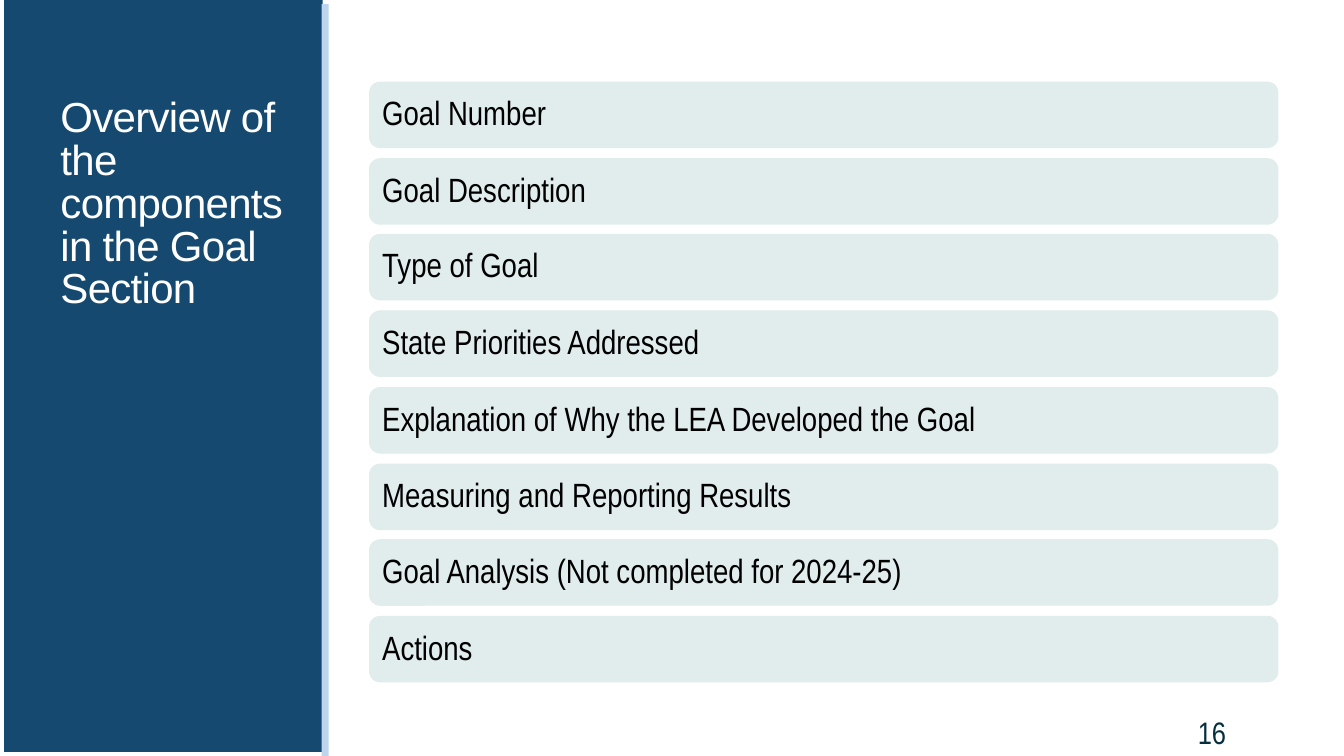
from pptx import Presentation
from pptx.dml.color import RGBColor
from pptx.enum.shapes import MSO_SHAPE as Shape
from pptx.enum.text import MSO_ANCHOR as Anchor, MSO_AUTO_SIZE as AutoSize, PP_ALIGN as Align
from pptx.util import Pt

EMU_PER_PX = 9144
COLORS = {
    "panel": "15496F",
    "stripe": "BDD6EE",
    "card": "E0EDEC",
    "title": "FFFFFF",
    "text": "000000",
    "number": "062E3D",
}
COMPONENTS = [
    "Goal Number",
    "Goal Description",
    "Type of Goal",
    "State Priorities Addressed",
    "Explanation of Why the LEA Developed the Goal",
    "Measuring and Reporting Results",
    "Goal Analysis (Not completed for 2024-25)",
    "Actions",
]
FIRST_CARD_TOP = 81
LAST_CARD_TOP = 611


def px(length):
    return length * EMU_PER_PX


def box(left, top, width, height):
    return px(left), px(top), px(width), px(height)


def add_block(slide, kind, position, color):
    shape = slide.shapes.add_shape(kind, *box(*position))
    shape.shadow.inherit = False
    shape.fill.solid()
    shape.fill.fore_color.rgb = RGBColor.from_string(COLORS[color])
    shape.line.fill.background()
    return shape


def write(shape, text, font, size, color, anchor, align=Align.LEFT, line_spacing=1.0):
    frame = shape.text_frame
    frame.text = text
    frame.word_wrap = True
    frame.auto_size = AutoSize.NONE
    frame.vertical_anchor = anchor
    paragraph = frame.paragraphs[0]
    paragraph.alignment = align
    paragraph.line_spacing = line_spacing
    run = paragraph.runs[0]
    run.font.name = font
    run.font.size = Pt(size)
    run.font.color.rgb = RGBColor.from_string(COLORS[color])
    return run


def place_title(slide, text):
    title = slide.shapes.title
    title.left, title.top, title.width, title.height = box(50, 65, 248, 250)
    run = write(title, text, "Arial", 30, "title", Anchor.BOTTOM, line_spacing=0.85)
    run.font._element.set("spc", "-50")
    title.element.getparent().append(title.element)


def add_cards(slide):
    pitch = (LAST_CARD_TOP - FIRST_CARD_TOP) / (len(COMPONENTS) - 1)
    for index, component in enumerate(COMPONENTS):
        top = FIRST_CARD_TOP + round(index * pitch)
        card = add_block(slide, Shape.ROUNDED_RECTANGLE, (366, top, 902, 66), "card")
        write(card, component, "Arial Narrow", 24, "text", Anchor.MIDDLE, line_spacing=0.9)


def add_page_number(slide, number):
    text_box = slide.shapes.add_textbox(*box(1083, 706, 143, 40))
    write(text_box, number, "Arial Narrow", 22.2, "number", Anchor.MIDDLE, Align.RIGHT)


def main():
    presentation = Presentation()
    presentation.slide_width = px(1333)
    presentation.slide_height = px(750)
    slide = presentation.slides.add_slide(presentation.slide_layouts[5])
    add_block(slide, Shape.RECTANGLE, (4, -4, 316, 750), "panel")
    add_block(slide, Shape.RECTANGLE, (319, 4, 7, 750), "stripe")
    place_title(slide, "Overview of the components in the Goal Section")
    add_cards(slide)
    add_page_number(slide, "16")
    presentation.save("out.pptx")


if __name__ == "__main__":
    main()
